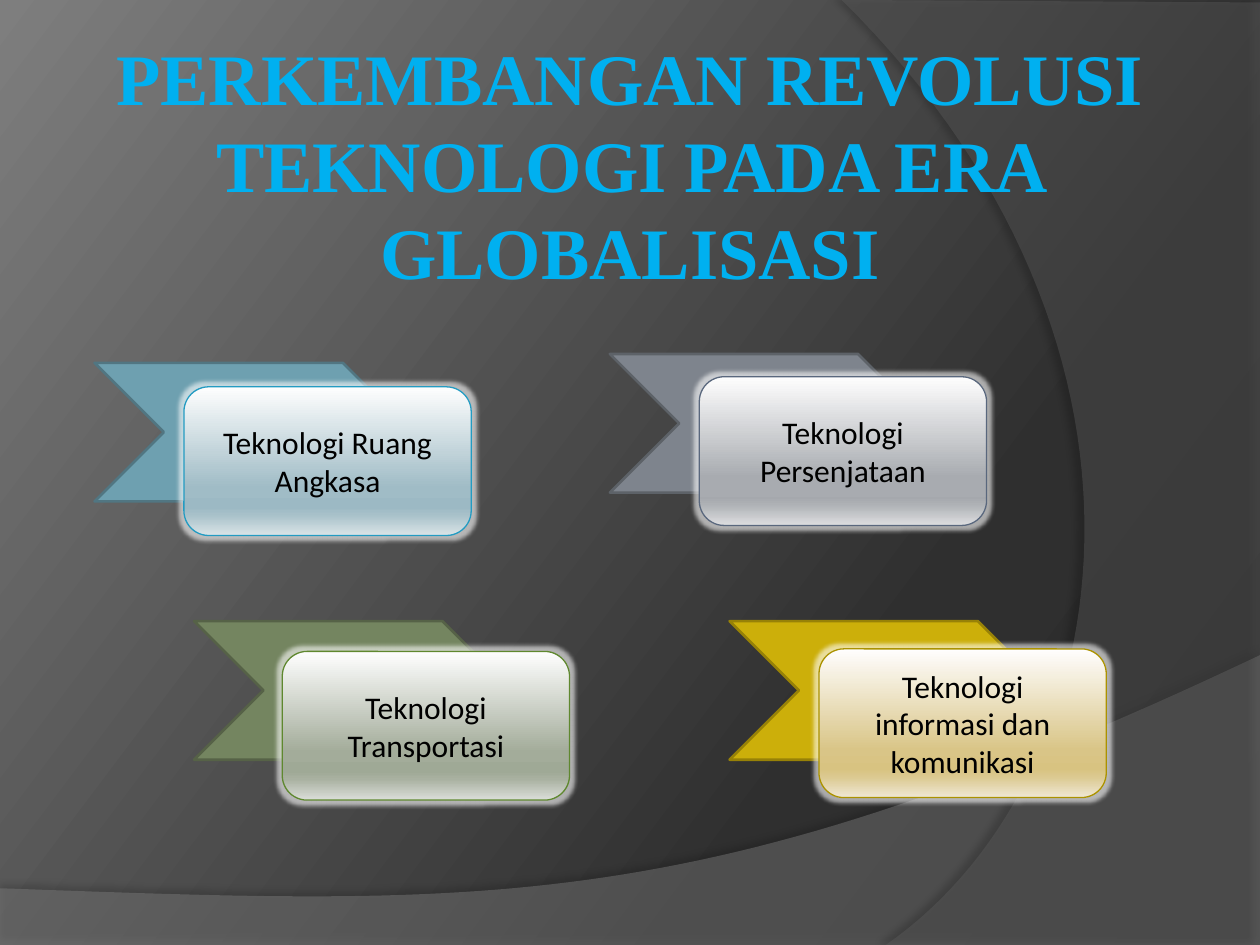
"""Builds a slide on the four branches of the technology revolution in the globalisation era."""
from lxml import etree
from pptx import Presentation
from pptx.dml.color import RGBColor
from pptx.enum.shapes import MSO_SHAPE
from pptx.enum.text import MSO_ANCHOR, MSO_AUTO_SIZE, PP_ALIGN
from pptx.oxml.ns import qn
from pptx.util import Inches, Pt

CHEVRON, ROUNDED = MSO_SHAPE.CHEVRON, MSO_SHAPE.ROUNDED_RECTANGLE
CENTER = PP_ALIGN.CENTER
TOP, MIDDLE = MSO_ANCHOR.TOP, MSO_ANCHOR.MIDDLE
NO_AUTOFIT = MSO_AUTO_SIZE.NONE

BLACK = RGBColor(0x00, 0x00, 0x00)
WHITE = RGBColor(0xFF, 0xFF, 0xFF)
SKY = RGBColor(0x00, 0xB0, 0xF0)
WAVE_GREY = RGBColor(0x7F, 0x7F, 0x7F)
ARC_GREY = RGBColor(0x5E, 0x5E, 0x5E)
BACKDROP = [RGBColor(0x28, 0x28, 0x28), RGBColor(0x2F, 0x2F, 0x2F), RGBColor(0x7E, 0x7E, 0x7E)]

GOLD = RGBColor(0xCC, 0xAF, 0x0A)
GOLD_EDGE = RGBColor(0x97, 0x81, 0x07)
GOLD_RIM = RGBColor(0xAB, 0x92, 0x00)
GOLD_SHEEN = [RGBColor.from_string(c) for c in ("FFFEFE", "D9C587", "D8C381", "DBC990", "EFE7D3")]
GREEN = RGBColor(0x74, 0x85, 0x60)
GREEN_EDGE = RGBColor(0x56, 0x62, 0x47)
GREEN_RIM = RGBColor(0x5F, 0x88, 0x2F)
GREEN_SHEEN = [RGBColor.from_string(c) for c in ("FEFEFE", "A3AC9A", "9FA996", "A9B1A1", "DBDED9")]
SLATE = RGBColor(0x7E, 0x84, 0x8D)
SLATE_EDGE = RGBColor(0x5D, 0x62, 0x68)
SLATE_RIM = RGBColor(0x59, 0x67, 0x7D)
SLATE_SHEEN = [RGBColor.from_string(c) for c in ("FEFEFE", "A8ABB0", "A5A8AD", "AEB1B5", "DDDEE0")]
TEAL = RGBColor(0x6E, 0xA0, 0xB0)
TEAL_EDGE = RGBColor(0x51, 0x76, 0x82)
TEAL_RIM = RGBColor(0x23, 0x9B, 0xC2)
TEAL_SHEEN = [RGBColor.from_string(c) for c in ("FEFEFE", "A0BCC6", "9CB9C4", "A7C0C9", "DAE4E7")]


def paint_gradient(fill, owner, positions, colors, angle):
    fill.gradient()
    gradient = owner.find(".//" + qn("a:gradFill"))
    stops = gradient.find(qn("a:gsLst"))
    for stop in list(stops):
        stops.remove(stop)
    for position, color in zip(positions, colors):
        stop = etree.SubElement(stops, qn("a:gs"), pos=str(position * 1000))
        etree.SubElement(stop, qn("a:srgbClr"), val=str(color))
    gradient.find(qn("a:lin")).set("ang", str(angle * 60000))


def write_text(shape, text, size, font, color, bold=False, anchor=MIDDLE, spacing=None):
    frame = shape.text_frame
    frame.word_wrap = True
    frame.vertical_anchor = anchor
    paragraph = frame.paragraphs[0]
    paragraph.alignment = CENTER
    paragraph.line_spacing = spacing
    run = paragraph.add_run()
    run.text = text
    run.font.size = Pt(size)
    run.font.name = font
    run.font.bold = bold
    run.font.color.rgb = color


prs = Presentation()
prs.slide_width, prs.slide_height = Inches(10), Inches(7.5)
slide = prs.slides.add_slide(prs.slide_layouts[5])
shapes = slide.shapes
paint_gradient(slide.background.fill, slide.element, (0, 30, 100), BACKDROP, 217)

sweeps = [
    ([(10, 7.5), (0, 7.5), (0, 7.05)], [(0, 7.05), (3.91, 7.19), (5.59, 7.29), (10, 5.2)],
     WAVE_GREY, 45, 35, 3.5, 270),
    ([(10, 0.02), (10, 7.5), (7.03, 7.5)], [(7.03, 7.5), (8.91, 6.19), (9.47, 2.75), (6.68, 0)],
     ARC_GREY, 40, 45, 4, 180),
]
STEPS = 60
for corners, controls, color, opacity, shade, distance, direction in sweeps:
    outline = list(corners)
    for step in range(1, STEPS + 1):
        t = step / STEPS
        weights = ((1 - t) ** 3, 3 * t * (1 - t) ** 2, 3 * t ** 2 * (1 - t), t ** 3)
        outline.append(tuple(sum(w * c[axis] for w, c in zip(weights, controls)) for axis in (0, 1)))
    points = [(Inches(x), Inches(y)) for x, y in outline]
    builder = shapes.build_freeform(*points[0])
    builder.add_line_segments(points[1:], close=True)
    sweep = builder.convert_to_shape()
    sweep.fill.solid()
    sweep.fill.fore_color.rgb = color
    sweep.line.fill.background()
    tint = sweep.element.spPr.find(qn("a:solidFill")).find(qn("a:srgbClr"))
    etree.SubElement(tint, qn("a:alpha"), val=str(opacity * 1000))
    sweep.shadow.inherit = False
    effects = sweep.element.spPr.find(qn("a:effectLst"))
    shadow = etree.SubElement(effects, qn("a:outerShdw"), blurRad=str(Pt(4)),
                              dist=str(Pt(distance)), dir=str(direction * 60000))
    shadow_color = etree.SubElement(shadow, qn("a:srgbClr"), val=str(BLACK))
    etree.SubElement(shadow_color, qn("a:alpha"), val=str(shade * 1000))

chevrons = [
    (5.79, 4.93, GOLD, GOLD_EDGE),
    (1.54, 4.93, GREEN, GREEN_EDGE),
    (4.84, 2.81, SLATE, SLATE_EDGE),
    (0.75, 2.88, TEAL, TEAL_EDGE),
]
for left, top, color, edge in chevrons:
    chevron = shapes.add_shape(CHEVRON, Inches(left), Inches(top), Inches(2.52), Inches(1.1))
    chevron.shadow.inherit = False
    chevron.fill.solid()
    chevron.fill.fore_color.rgb = color
    chevron.line.color.rgb = edge
    chevron.line.width = Pt(1.5)

title = shapes.title
title.left, title.top, title.width, title.height = Inches(0.75), Inches(0.21), Inches(8.5), Inches(1.61)
heading = title.text_frame
heading.margin_left = heading.margin_right = heading.margin_top = heading.margin_bottom = Inches(0.05)
heading.auto_size = NO_AUTOFIT
write_text(title, "PERKEMBANGAN REVOLUSI TEKNOLOGI PADA ERA GLOBALISASI", 41.4, "Times New Roman", SKY,
           bold=True, anchor=TOP, spacing=Pt(49.7))
title.element.getparent().append(title.element)

branches = [
    ("Teknologi Ruang Angkasa", 1.46, 3.07, TEAL_SHEEN, TEAL_RIM),
    ("Teknologi Persenjataan", 5.55, 2.99, SLATE_SHEEN, SLATE_RIM),
    ("Teknologi informasi dan komunikasi", 6.5, 5.15, GOLD_SHEEN, GOLD_RIM),
    ("Teknologi Transportasi", 2.24, 5.17, GREEN_SHEEN, GREEN_RIM),
]
for label, left, top, sheen, rim in branches:
    branch = shapes.add_shape(ROUNDED, Inches(left), Inches(top), Inches(2.28), Inches(1.18))
    paint_gradient(branch.fill, branch.element, (0, 68, 81, 86, 100), sheen, 90)
    branch.line.color.rgb = rim
    branch.line.width = Pt(0.75)
    branch.shadow.inherit = False
    effects = branch.element.spPr.find(qn("a:effectLst"))
    glow = etree.SubElement(effects, qn("a:glow"), rad=str(Pt(5)))
    glow_color = etree.SubElement(glow, qn("a:srgbClr"), val=str(WHITE))
    etree.SubElement(glow_color, qn("a:alpha"), val="60000")
    write_text(branch, label, 18, "Calibri", BLACK)

prs.save("out.pptx")
